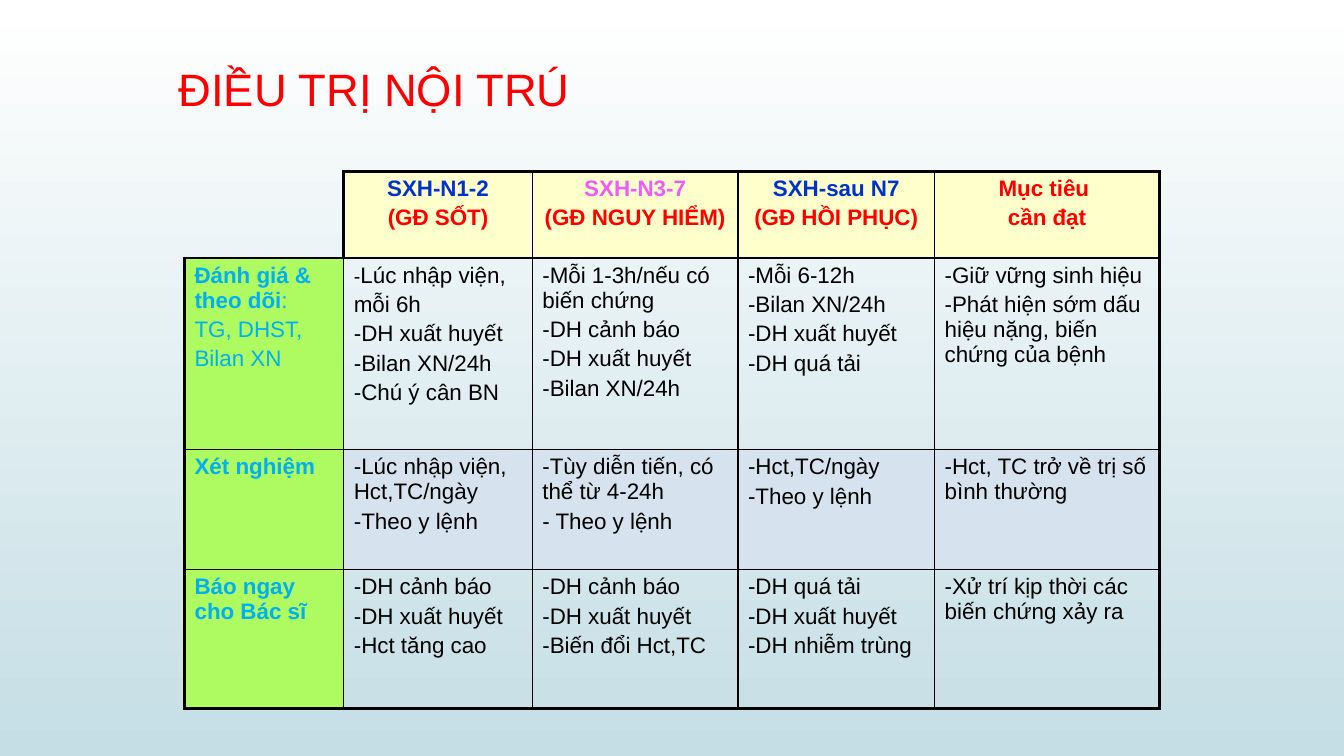
from lxml import etree
from pptx import Presentation
from pptx.dml.color import RGBColor
from pptx.enum.text import MSO_ANCHOR, PP_ALIGN
from pptx.oxml.ns import qn
from pptx.util import Inches, Pt

BOTTOM = MSO_ANCHOR.BOTTOM
LEFT, CENTER = PP_ALIGN.LEFT, PP_ALIGN.CENTER

HEX = {
    "top": "FFFFFF", "base": "C5DEE5", "black": "000000", "red": "FF0000",
    "blue": "0033CC", "pink": "EF5BF6", "sky": "00B0F0",
    "cream": "FFFFCC", "lime": "AEFA61", "band": "D6E2ED",
}
FACE, SIZE = "Arial", 16
THIN, THICK = 1, 2.25
COLS = [1.58, 1.87, 2.04, 1.95, 2.23]
ROWS = [0.86, 1.9, 1.19, 1.38]

# Column heads: two lines and the colour of the first
HEADS = [
    ("SXH-N1-2", "(GĐ SỐT)", "blue"),
    ("SXH-N3-7", "(GĐ NGUY HIỂM)", "pink"),
    ("SXH-sau N7", "(GĐ HỒI PHỤC)", "blue"),
    ("Mục tiêu ", "cần đạt", "red"),
]
# Row label, plain lines under it, then the four cells
CARE = [
    ("Đánh giá & theo dõi", ["TG, DHST,", "Bilan XN"], [
        ["-Lúc nhập viện,", "mỗi 6h", "-DH xuất huyết", "-Bilan XN/24h",
         "-Chú ý cân BN"],
        ["-Mỗi 1-3h/nếu có biến chứng", "-DH cảnh báo", "-DH xuất huyết",
         "-Bilan XN/24h"],
        ["-Mỗi 6-12h", "-Bilan XN/24h", "-DH xuất huyết", "-DH quá tải"],
        ["-Giữ vững sinh hiệu",
         "-Phát hiện sớm dấu hiệu nặng, biến chứng của bệnh"]]),
    ("Xét nghiệm", [], [
        ["-Lúc nhập viện, Hct,TC/ngày", "-Theo y lệnh"],
        ["-Tùy diễn tiến, có thể từ 4-24h", "- Theo y lệnh"],
        ["-Hct,TC/ngày", "-Theo y lệnh"],
        ["-Hct, TC trở về trị số bình thường"]]),
    ("Báo ngay cho Bác sĩ", [], [
        ["-DH cảnh báo", "-DH xuất huyết", "-Hct tăng cao"],
        ["-DH cảnh báo", "-DH xuất huyết", "-Biến đổi Hct,TC"],
        ["-DH quá tải", "-DH xuất huyết", "-DH nhiễm trùng"],
        ["-Xử trí kịp thời các biến chứng xảy ra"]]),
]


def tint(name):
    return RGBColor.from_string(HEX[name])


def style(font, color, size=SIZE, bold=False):
    font.name, font.size, font.bold = FACE, Pt(size), bold
    font.color.rgb = tint(color)


def write(cell, lines, align=LEFT):
    """Fill a cell with (text, colour, bold) lines."""
    frame = cell.text_frame
    for i, (text, color, bold) in enumerate(lines):
        para = frame.add_paragraph() if i else frame.paragraphs[0]
        para.alignment, para.space_before = align, Pt(0.2 * SIZE)
        run = para.add_run()
        run.text = text
        style(run.font, color, bold=bold)


def paint(cell, name):
    if name:
        cell.fill.solid()
        cell.fill.fore_color.rgb = tint(name)
    else:
        cell.fill.background()


def edge(cell, widths):
    """Draw the sides of a cell; a width of 0 hides the side."""
    props = cell._tc.get_or_add_tcPr()
    for i, (side, width) in enumerate(zip("LRTB", widths)):
        line = etree.Element(qn("a:ln" + side), w=str(Pt(width)))
        if width:
            fill = etree.SubElement(line, qn("a:solidFill"))
            etree.SubElement(fill, qn("a:srgbClr"), val=HEX["black"])
        else:
            etree.SubElement(line, qn("a:noFill"))
        props.insert(i, line)


def sides(row, col):
    """Thick around the outline, which steps in at the blank corner."""
    if row == col == 0:
        return 0, THICK, 0, THICK
    left = THICK if col == 0 or (row, col) == (0, 1) else THIN
    top = THICK if row == 0 or (row, col) == (1, 0) else THIN
    right = THICK if col == len(COLS) - 1 else THIN
    base = THICK if row == len(ROWS) - 1 else THIN
    return left, right, top, base


def back(slide):
    fill = slide.background.fill
    fill.gradient()
    fill.gradient_angle = 270
    for stop, name in zip(fill.gradient_stops, ("top", "base")):
        stop.color.rgb = tint(name)


def head(slide, text):
    title = slide.shapes.title
    title.left, title.top = Inches(1.67), 0
    title.width, title.height = Inches(10), Inches(1.25)
    frame = title.text_frame
    frame.text, frame.vertical_anchor = text, BOTTOM
    frame.margin_bottom = Inches(0.1)
    para = frame.paragraphs[0]
    para.alignment = LEFT
    style(para.runs[0].font, "red", 32.4)


def grid(slide):
    frame = slide.shapes.add_table(
        len(ROWS), len(COLS), Inches(1.83), Inches(1.7),
        Inches(sum(COLS)), Inches(sum(ROWS)))
    table = frame.table
    table.first_row = table.horz_banding = False
    for part, width in zip(table.columns, COLS):
        part.width = Inches(width)
    for part, height in zip(table.rows, ROWS):
        part.height = Inches(height)

    # Column heads
    paint(table.cell(0, 0), None)
    for col, (first, second, color) in enumerate(HEADS, 1):
        cell = table.cell(0, col)
        write(cell, [(first, color, True), (second, "red", True)], CENTER)
        paint(cell, "cream")

    # Row labels and body
    for row, (label, notes, cells) in enumerate(CARE, 1):
        cell = table.cell(row, 0)
        write(cell, [(label, "sky", True)] + [(n, "sky", False) for n in notes])
        paint(cell, "lime")
        for col, lines in enumerate(cells, 1):
            cell = table.cell(row, col)
            write(cell, [(text, "black", False) for text in lines])
            paint(cell, "band" if row == 2 else None)

    # Light colon after the first label, smaller first dash
    colon = table.cell(1, 0).text_frame.paragraphs[0].add_run()
    colon.text = ":"
    style(colon.font, "sky")
    para = table.cell(1, 1).text_frame.paragraphs[0]
    dash, rest = para.runs[0], para.add_run()
    dash.text, rest.text = dash.text[:1], dash.text[1:]
    style(dash.font, "black", 14)
    style(rest.font, "black")

    # Borders
    for row in range(len(ROWS)):
        for col in range(len(COLS)):
            edge(table.cell(row, col), sides(row, col))


def main():
    deck = Presentation()
    deck.slide_width, deck.slide_height = Inches(13.33), Inches(7.5)
    slide = deck.slides.add_slide(deck.slide_layouts.get_by_name("Title Only"))
    back(slide)
    head(slide, "ĐIỀU TRỊ NỘI TRÚ")
    grid(slide)
    deck.save("out.pptx")


if __name__ == "__main__":
    main()
